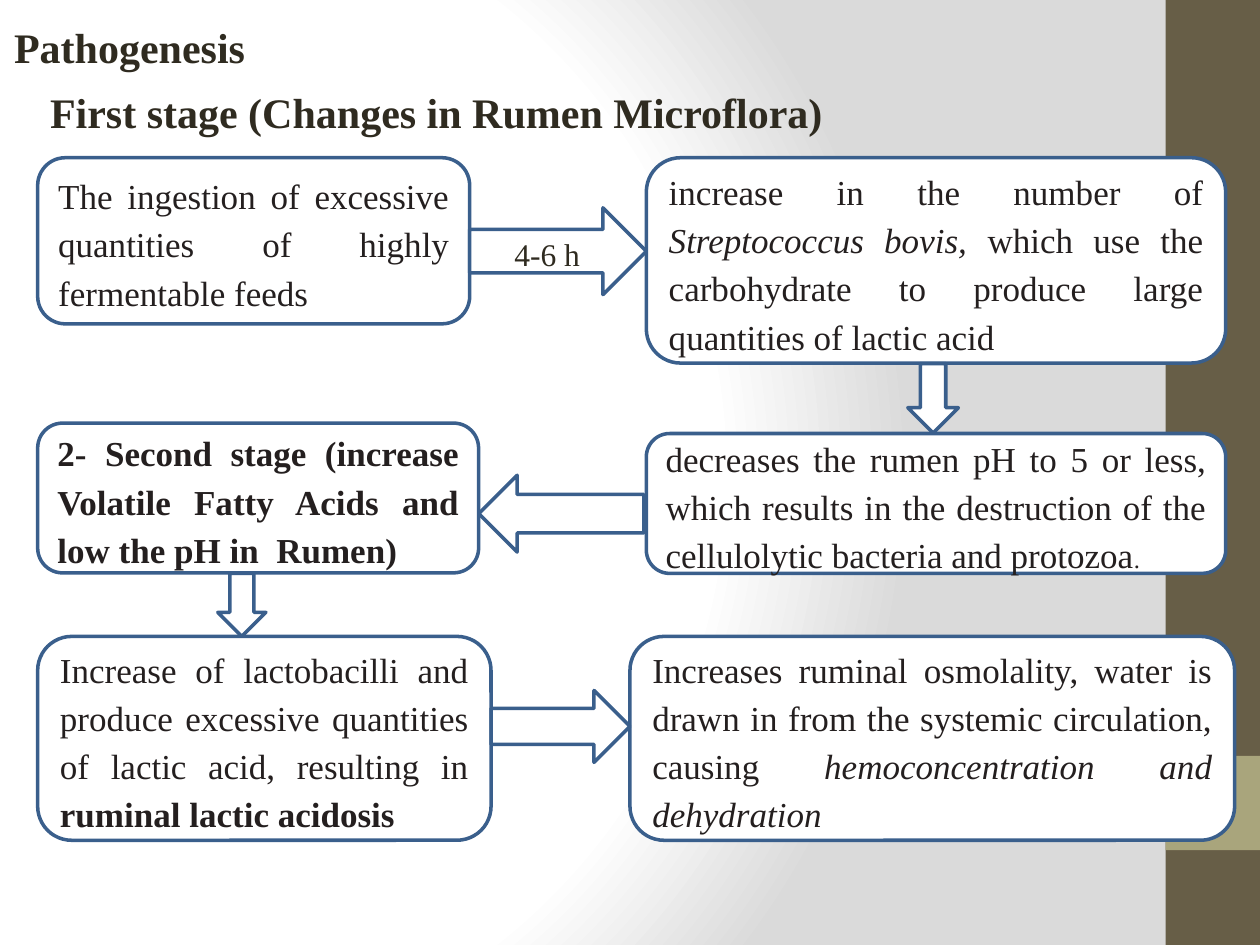
"""Build the slide on the pathogenesis of ruminal lactic acidosis."""
from dataclasses import dataclass

from pptx import Presentation
from pptx.dml.color import RGBColor as Rgb
from pptx.enum.shapes import MSO_SHAPE as Shape
from pptx.enum.text import MSO_ANCHOR as Anchor, MSO_AUTO_SIZE as AutoSize, PP_ALIGN as Align
from pptx.oxml import parse_xml
from pptx.oxml.ns import nsdecls, qn
from pptx.util import Cm, Pt


@dataclass(frozen=True)
class Theme:
    font: str = "Times New Roman"
    white: str = "FFFFFF"
    grey: str = "DADADA"
    bar: str = "675E47"
    accent: str = "A9A57C"
    outline: str = "3A5F8C"
    heading: str = "2F2B20"
    body: str = "241F1F"
    heading_size: int = 24
    body_size: int = 20
    label_size: int = 18
    small_size: int = 14


theme = Theme()


def add_block(page, kind, place, fill, outline=None):
    shape = page.shapes.add_shape(kind, *map(Cm, place))
    shape.shadow.inherit = False
    shape.fill.solid()
    shape.fill.fore_color.rgb = Rgb.from_string(fill)
    if outline:
        shape.line.color.rgb = Rgb.from_string(outline)
        shape.line.width = Pt(2)
    else:
        shape.line.fill.background()
    return shape


def write(shape, spans, size, color, align, bold=None, spacing=None):
    frame = shape.text_frame
    frame.word_wrap = True
    frame.auto_size = AutoSize.NONE
    frame.vertical_anchor = Anchor.MIDDLE
    para = frame.paragraphs[0]
    para.alignment = align
    para.line_spacing = spacing
    para.font.name = theme.font
    para.font.size = Pt(size)
    para.font.bold = bold
    para.font.color.rgb = Rgb.from_string(color)
    for text, style in spans:
        span = para.add_run()
        span.text = text
        if style == "bold":
            span.font.bold = True
        elif style == "italic":
            span.font.italic = True
        elif style == "small":
            span.font.size = Pt(theme.small_size)
    return para


deck = Presentation()
deck.slide_width, deck.slide_height = Cm(25.4), Cm(19.05)
page = deck.slides.add_slide(deck.slide_layouts[5])

page.background.fill.solid()
background = page.element.cSld.find(qn("p:bg")).find(qn("p:bgPr"))
stops = "".join(
    f'<a:gs pos="{position * 1000}"><a:srgbClr val="{color}"/></a:gs>'
    for position, color in ((0, theme.white), (75, theme.white), (100, theme.grey))
)
background.replace(background[0], parse_xml(
    f'<a:gradFill {nsdecls("a")} rotWithShape="1"><a:gsLst>{stops}</a:gsLst>'
    '<a:path path="circle"><a:fillToRect l="20000" t="50000" r="100000" b="50000"/></a:path>'
    '</a:gradFill>'
))

add_block(page, Shape.RECTANGLE, (23.5, 0, 1.9, 19.05), theme.bar)
add_block(page, Shape.RECTANGLE, (23.5, 15.24, 1.9, 1.9), theme.accent)

title = page.shapes.title
title.left, title.top, title.width, title.height = map(Cm, (0.03, 0.23, 5.4, 1.42))
subtitle = page.shapes.add_textbox(*map(Cm, (0.76, 1.6, 16.36, 1.3)))
for heading, text in (
    (title, "Pathogenesis"),
    (subtitle, "First stage (Changes in Rumen Microflora)"),
):
    write(heading, [(text, "")], theme.heading_size, theme.heading, Align.LEFT, bold=True)

left, right = 0.76, 13.03
steps = [
    ((left, 3.18, 8.71, 3.35), [
        ("The ingestion of excessive quantities of highly fermentable feeds", "")]),
    ((right, 3.18, 11.68, 4.14), [
        ("increase in the number of ", ""),
        ("Streptococcus bovis, ", "italic"),
        ("which use the carbohydrate to produce large quantities of lactic acid", "")]),
    ((right, 8.74, 11.68, 2.82), [
        ("decreases the rumen pH to 5 or less, which results in the destruction of "
         "the cellulolytic bacteria and protozoa", ""),
        (".", "small")]),
    ((left, 8.53, 8.89, 3.02), [
        ("2- Second stage (increase Volatile Fatty Acids and low the pH in  Rumen)", "bold")]),
    ((left, 12.83, 9.14, 4.11), [
        ("Increase of lactobacilli and produce excessive quantities of lactic acid, "
         "resulting in ", ""),
        ("ruminal lactic acidosis", "bold")]),
    ((12.7, 12.83, 12.19, 4.11), [
        ("Increases ruminal osmolality, water is drawn in from the systemic circulation, "
         "causing ", ""),
        ("hemoconcentration and dehydration", "italic")]),
]
for place, spans in steps:
    box = add_block(page, Shape.ROUNDED_RECTANGLE, place, theme.white, theme.outline)
    write(box, spans, theme.body_size, theme.body, Align.JUSTIFY, spacing=1.15)

arrows = [
    ((9.47, 4.19, 3.56, 1.75), 0, "4-6 h"),
    ((18.11, 7.52, 1.4, 1.02), 90, ""),
    ((9.65, 9.58, 3.33, 1.55), 180, ""),
    ((4.24, 11.71, 1.27, 0.97), 90, ""),
    ((9.9, 13.92, 2.8, 1.45), 0, ""),
]
for place, turn, label in arrows:
    arrow = add_block(page, Shape.RIGHT_ARROW, place, theme.white, theme.outline)
    arrow.rotation = turn
    if label:
        para = write(arrow, [(label, "")], theme.label_size, theme.heading, Align.CENTER,
                     spacing=1.15)
        para.space_after = Pt(10)

deck.save("out.pptx")
